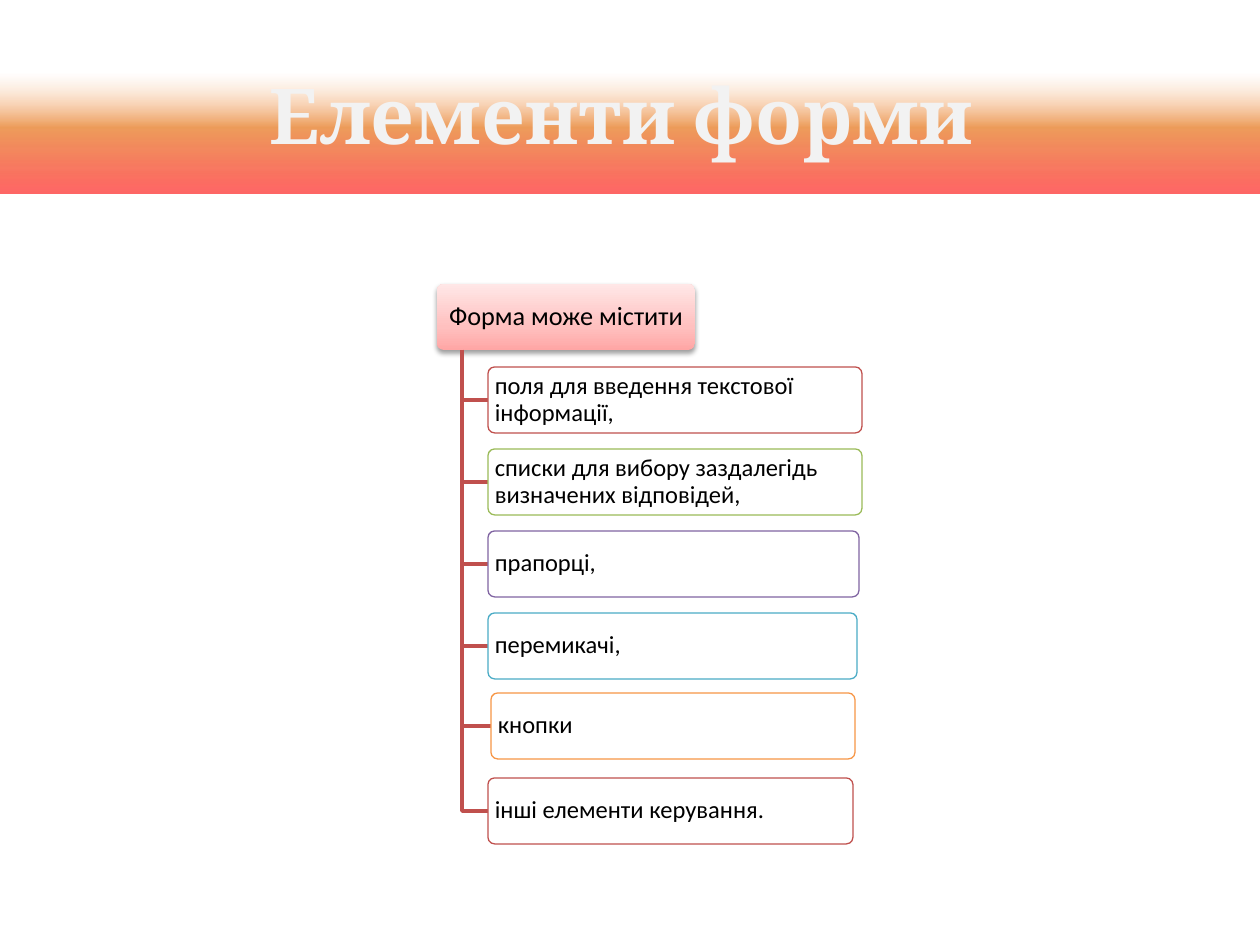
from lxml import etree
from pptx import Presentation
from pptx.dml.color import RGBColor
from pptx.enum.shapes import MSO_SHAPE as SHAPE
from pptx.enum.text import MSO_ANCHOR as ANCHOR, PP_ALIGN as ALIGN
from pptx.oxml.ns import qn
from pptx.util import Pt

SCALE = 914400 / 126


def px(n):
    return round(n * SCALE)


def rgb(value):
    return RGBColor.from_string(value)


def add_color(parent, value, alpha=100):
    color = etree.SubElement(parent, qn("a:srgbClr"), val=value)
    if alpha < 100:
        etree.SubElement(color, qn("a:alpha"), val=str(alpha * 1000))


class FormSlide:
    font = "Calibri"
    ink = "000000"
    accent = "C0504D"
    row_height = 66

    def __init__(self, prs):
        self.slide = prs.slides.add_slide(prs.slide_layouts[5])
        self.shapes = self.slide.shapes

    def gradient(self, s, stops, angle):
        s.fill.gradient()
        grad = s._element.spPr.find(qn("a:gradFill"))
        for child in list(grad):
            grad.remove(child)
        gs_list = etree.SubElement(grad, qn("a:gsLst"))
        for pos, color, alpha in stops:
            gs = etree.SubElement(gs_list, qn("a:gs"), pos=str(pos * 1000))
            add_color(gs, color, alpha)
        etree.SubElement(grad, qn("a:lin"), ang=str(angle * 60000), scaled="0")

    def drop_shadow(self, s):
        effects = s._element.spPr.find(qn("a:effectLst"))
        shadow = etree.SubElement(
            effects, qn("a:outerShdw"), blurRad=str(Pt(3.1)),
            dist=str(Pt(1.6)), dir="5400000", rotWithShape="0")
        add_color(shadow, self.ink, 38)

    def title(self, text, x, y, w, h, stops):
        s = self.shapes.title
        s.left, s.top, s.width, s.height = map(px, (x, y, w, h))
        self.gradient(s, stops, 90)
        tf = s.text_frame
        tf.text = text
        tf.vertical_anchor = ANCHOR.MIDDLE
        p = tf.paragraphs[0]
        p.alignment = ALIGN.CENTER
        p.font.name = "Cambria"
        p.font.size = Pt(44)
        p.font.bold = True
        p.font.color.rgb = rgb("F2F2F2")

    def box(self, text, x, y, w, size, align):
        s = self.shapes.add_shape(
            SHAPE.ROUNDED_RECTANGLE, px(x), px(y), px(w), px(self.row_height))
        s.adjustments[0] = 0.1
        s.shadow.inherit = False
        tf = s.text_frame
        tf.word_wrap = True
        tf.vertical_anchor = ANCHOR.MIDDLE
        tf.margin_left = tf.margin_right = px(5)
        tf.margin_top = tf.margin_bottom = px(4)
        tf.text = text
        p = tf.paragraphs[0]
        p.alignment = align
        p.line_spacing = 0.9
        p.font.name = self.font
        p.font.size = Pt(size)
        p.font.color.rgb = rgb(self.ink)
        return s

    def header(self, text, x, y, w, stops):
        s = self.box(text, x, y, w, 15, ALIGN.CENTER)
        self.gradient(s, stops, 270)
        s.line.fill.background()
        self.drop_shadow(s)

    def item(self, text, x, y, w, color):
        s = self.box(text, x, y, w, 14, ALIGN.LEFT)
        s.fill.solid()
        s.fill.fore_color.rgb = rgb("FFFFFF")
        s.line.color.rgb = rgb(color)
        s.line.width = Pt(0.75)

    def branch(self, x, top, right, y):
        builder = self.shapes.build_freeform(x, top, scale=SCALE)
        builder.add_line_segments([(x, y), (right, y)], close=False)
        s = builder.convert_to_shape()
        s.fill.background()
        s.line.color.rgb = rgb(self.accent)
        s.line.width = Pt(2)
        s.shadow.inherit = False


def main():
    prs = Presentation()
    prs.slide_width, prs.slide_height = px(1260), px(945)
    form = FormSlide(prs)

    form.title("Елементи форми ", 0, 35, 1260, 158, [
        (0, "FDEADA", 0), (24, "FAC090", 0),
        (58, "E46C0A", 67), (100, "FF0000", 60)])

    head_top = 284
    form.header("Форма може містити", 437, head_top, 258, [
        (0, "FFA6A5", 100), (35, "FFC0BF", 100), (100, "FFE7E7", 100)])

    items = [
        ("поля для введення текстової інформації,", 488, 367, 374, "C0504D"),
        ("списки для вибору заздалегідь визначених відповідей,",
         488, 449, 374, "9BBB59"),
        ("прапорці,", 488, 531, 371, "8064A2"),
        ("перемикачі,", 488, 613, 369, "4BACC6"),
        ("кнопки", 491, 693, 364, "F79646"),
        ("інші елементи керування.", 488, 778, 365, "C0504D"),
    ]
    for text, x, y, w, color in items:
        form.branch(462, head_top + form.row_height, x, y + form.row_height // 2)
        form.item(text, x, y, w, color)

    prs.save("out.pptx")


if __name__ == "__main__":
    main()
